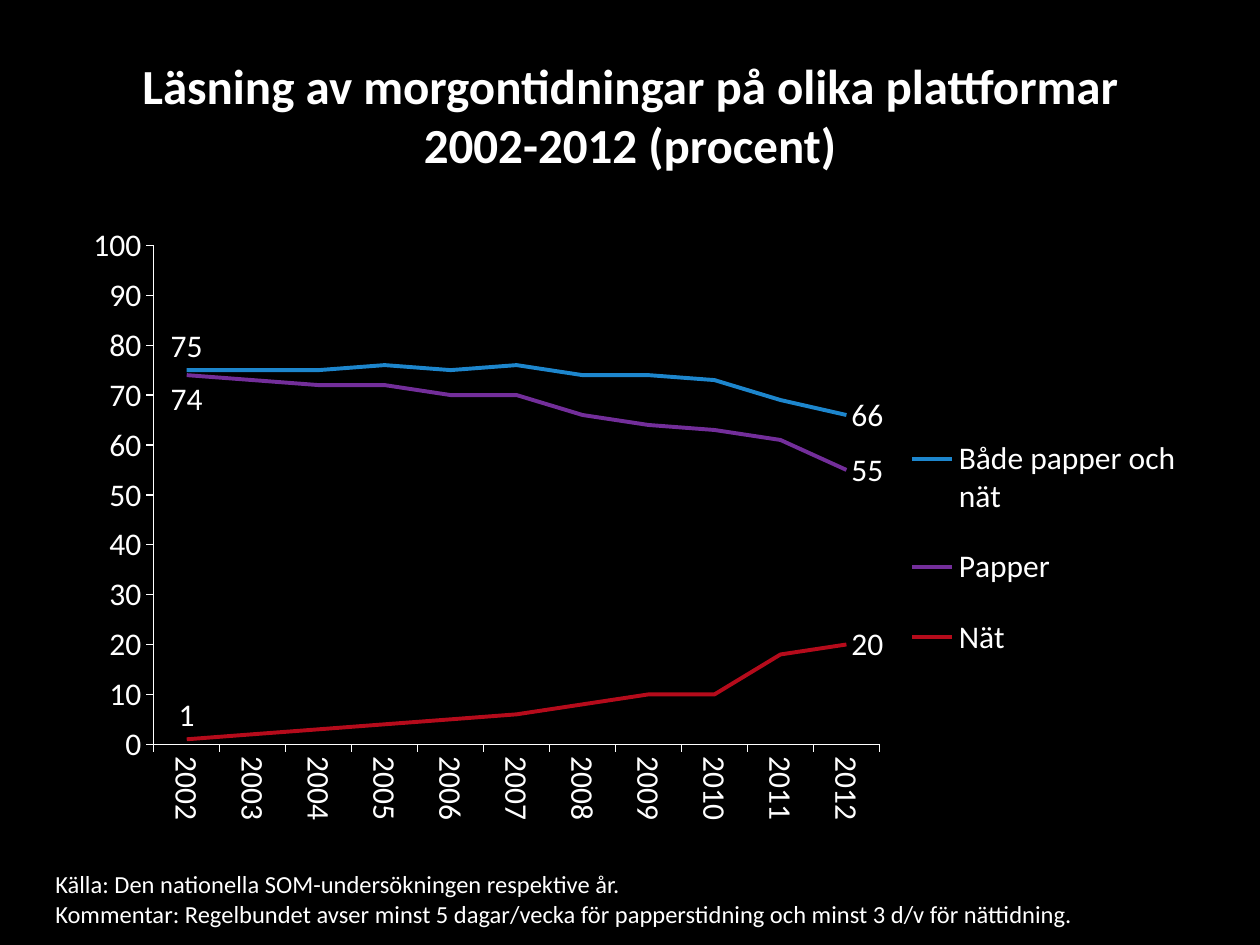
import pptx
import pptx.chart.data
import pptx.dml.color
import pptx.enum.chart
import pptx.enum.text
import pptx.oxml
import pptx.oxml.ns
import pptx.util
from pptx.util import Inches

WHITE = "FFFFFF"


def color(hex_string):
    return pptx.dml.color.RGBColor.from_string(hex_string)


def style_font(font, size, bold=False):
    font.name = "Calibri"
    font.size = pptx.util.Pt(size)
    font.bold = bold
    font.color.rgb = color(WHITE)


presentation = pptx.Presentation()
presentation.slide_width = Inches(10)
presentation.slide_height = Inches(7.5)
slide = presentation.slides.add_slide(presentation.slide_layouts[5])
slide.background.fill.solid()
slide.background.fill.fore_color.rgb = color("000000")

# Title
title = slide.shapes.title
title.left, title.top = Inches(0.75), Inches(0.13)
title.width, title.height = Inches(8.5), Inches(1.56)
title.text_frame.text = "Läsning av morgontidningar på olika plattformar 2002-2012 (procent)"
title.text_frame.vertical_anchor = pptx.enum.text.MSO_ANCHOR.MIDDLE
title_paragraph = title.text_frame.paragraphs[0]
title_paragraph.alignment = pptx.enum.text.PP_ALIGN.CENTER
style_font(title_paragraph.runs[0].font, 28, bold=True)

# Line chart
label_position = pptx.enum.chart.XL_LABEL_POSITION
readership = [
    ("Både papper och nät", [75, 75, 75, 76, 75, 76, 74, 74, 73, 69, 66], "1D86CD", label_position.ABOVE),
    ("Papper", [74, 73, 72, 72, 70, 70, 66, 64, 63, 61, 55], "732E9A", label_position.BELOW),
    ("Nät", [1, 2, 3, 4, 5, 6, 8, 10, 10, 18, 20], "B50B1B", label_position.ABOVE),
]
chart_data = pptx.chart.data.CategoryChartData(number_format="General")
chart_data.categories = [str(year) for year in range(2002, 2013)]
for name, values, _, _ in readership:
    chart_data.add_series(name, values)
chart = slide.shapes.add_chart(
    pptx.enum.chart.XL_CHART_TYPE.LINE,
    Inches(0.5), Inches(1.75), Inches(9), Inches(4.95), chart_data,
).chart
chart.has_title = False
style_font(chart.font, 18)
chart.plots[0].vary_by_categories = False

for series, (_, values, line_color, first_position) in zip(chart.plots[0].series, readership):
    series.smooth = False
    series.marker.style = pptx.enum.chart.XL_MARKER_STYLE.NONE
    series.format.line.width = pptx.util.Pt(2.25)
    series.format.line.color.rgb = color(line_color)
    series.data_labels.show_value = False
    for index, position in ((0, first_position), (len(values) - 1, label_position.RIGHT)):
        label = series.points[index].data_label
        style_font(label.font, 18)
        label.position = position

for axis in (chart.category_axis, chart.value_axis):
    axis.has_major_gridlines = False
    axis.major_tick_mark = pptx.enum.chart.XL_TICK_MARK.OUTSIDE
    axis.minor_tick_mark = pptx.enum.chart.XL_TICK_MARK.NONE
    axis.format.line.color.rgb = color(WHITE)
    axis.format.line.width = pptx.util.Pt(0.75)
    style_font(axis.tick_labels.font, 18)
chart.value_axis.minimum_scale = 0
chart.value_axis.maximum_scale = 100
chart.value_axis.major_unit = 10

qn = pptx.oxml.ns.qn
year_text = chart.category_axis._element.find(qn("c:txPr")).find(qn("a:bodyPr"))
year_text.set("rot", "5400000")
year_text.set("vert", "horz")

chart.has_legend = True
chart.legend.position = pptx.enum.chart.XL_LEGEND_POSITION.RIGHT
chart.legend.include_in_layout = False
style_font(chart.legend.font, 18)

# Fixed places for the plot area and the legend, as fractions of the chart
plot_area = chart._chartSpace.chart.plotArea
layouts = [
    (plot_area, 0, '<c:layoutTarget val="inner"/>', (0.08, 0.04, 0.64, 0.8)),
    (chart.legend._element, 1, "", (0.74, 0.3, 0.25, 0.45)),
]
for parent, index, target, (x, y, width, height) in layouts:
    for old_layout in parent.findall(qn("c:layout")):
        parent.remove(old_layout)
    parent.insert(index, pptx.oxml.parse_xml(
        f'<c:layout {pptx.oxml.ns.nsdecls("c")}><c:manualLayout>{target}'
        '<c:xMode val="edge"/><c:yMode val="edge"/>'
        f'<c:x val="{x}"/><c:y val="{y}"/><c:w val="{width}"/><c:h val="{height}"/>'
        '</c:manualLayout></c:layout>'
    ))

# Source note
note = slide.shapes.add_textbox(Inches(0.34), Inches(6.85), Inches(9.32), Inches(0.57))
note.text_frame.word_wrap = True
note.text_frame.text = (
    "Källa: Den nationella SOM-undersökningen respektive år.\n"
    "Kommentar: Regelbundet avser minst 5 dagar/vecka för papperstidning "
    "och minst 3 d/v för nättidning."
)
for paragraph in note.text_frame.paragraphs:
    style_font(paragraph.runs[0].font, 14)

presentation.save("out.pptx")
